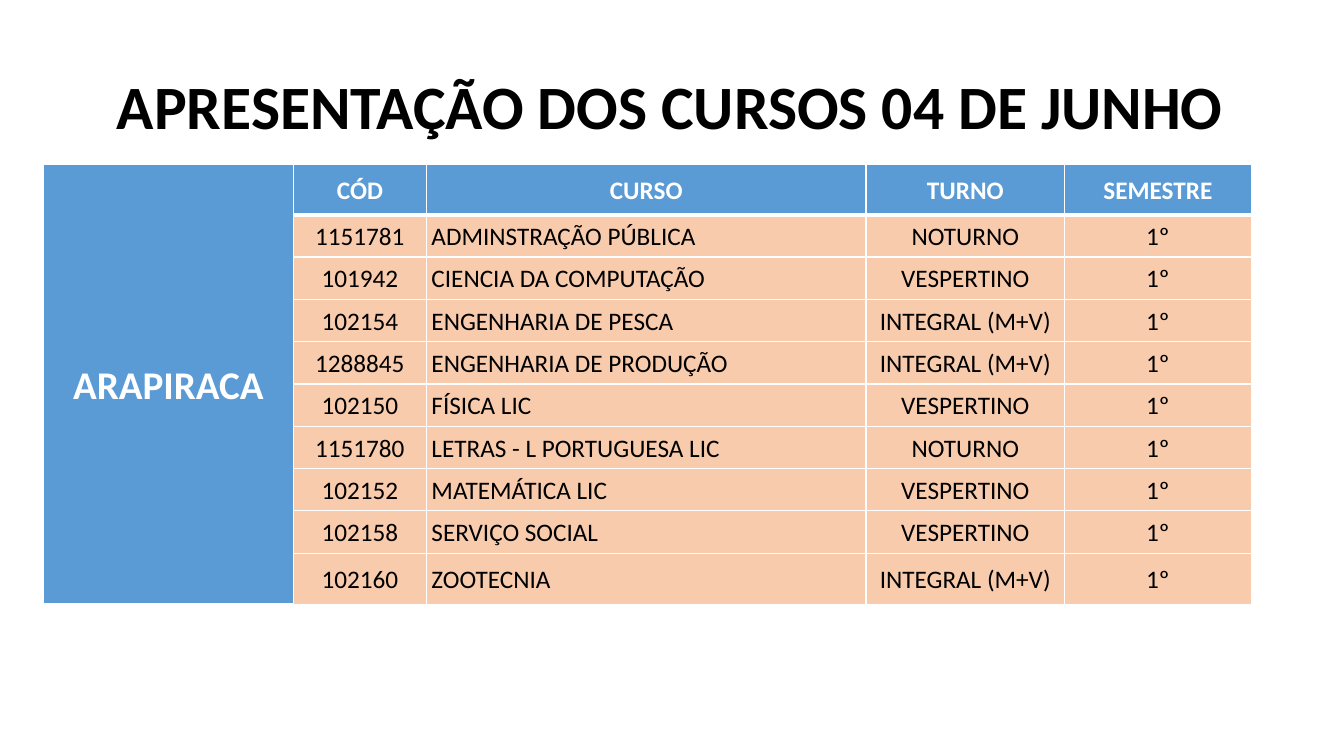
"""Builds the slide that lists the Arapiraca courses presented on 4 June."""
from typing import NamedTuple

from pptx import Presentation
from pptx import util as u
from pptx.dml.color import RGBColor
from pptx.enum import text
from pptx.oxml import parse_xml
from pptx.oxml.ns import nsdecls

HUES = {"head": "5B9BD5", "body": "F8CBAD", "white": "FFFFFF", "black": "000000"}
FONT = "Calibri"
WIDTHS = (2.48, 1.32, 4.36, 1.97, 1.85)
HEADS = ("ARAPIRACA", "CÓD", "CURSO", "TURNO", "SEMESTRE")
MID = text.PP_ALIGN.CENTER
LEFT = text.PP_ALIGN.LEFT


class Course(NamedTuple):
    code: str
    name: str
    shift: str
    term: str = "1º"


class Look(NamedTuple):
    fill: str
    ink: str
    size: int
    bold: bool
    align: text.PP_ALIGN
    base: int


COURSES = (
    Course("1151781", "ADMINSTRAÇÃO PÚBLICA", "NOTURNO"),
    Course("101942", "CIENCIA DA COMPUTAÇÃO", "VESPERTINO"),
    Course("102154", "ENGENHARIA DE PESCA", "INTEGRAL (M+V)"),
    Course("1288845", "ENGENHARIA DE PRODUÇÃO", "INTEGRAL (M+V)"),
    Course("102150", "FÍSICA LIC", "VESPERTINO"),
    Course("1151780", "LETRAS - L PORTUGUESA LIC", "NOTURNO"),
    Course("102152", "MATEMÁTICA LIC", "VESPERTINO"),
    Course("102158", "SERVIÇO SOCIAL", "VESPERTINO"),
    Course("102160", "ZOOTECNIA", "INTEGRAL (M+V)"),
)


def style(para, size: int, ink: str, bold: bool, align, gap: float) -> None:
    """Format a paragraph and its runs."""
    para.alignment = align
    para.line_spacing = gap
    for run in para.runs:
        font = run.font
        font.name, font.size, font.bold = FONT, u.Pt(size), bold
        font.color.rgb = RGBColor.from_string(HUES[ink])


def edge(cell, base: int) -> None:
    """Give a cell white borders, with the bottom one base points wide."""
    props = cell._tc.get_or_add_tcPr()
    sides = (("L", 1), ("R", 1), ("T", 1), ("B", base))
    for spot, (side, width) in enumerate(sides):
        props.insert(spot, parse_xml(
            f'<a:ln{side} {nsdecls("a")} w="{u.Pt(width)}"><a:solidFill>'
            f'<a:srgbClr val="{HUES["white"]}"/></a:solidFill></a:ln{side}>'))


def paint(cell, words: str, look: Look) -> None:
    """Fill a cell with words, colour and borders."""
    cell.text_frame.text = words
    cell.vertical_anchor = text.MSO_ANCHOR.MIDDLE
    cell.margin_left = cell.margin_right = u.Inches(0.05)
    cell.margin_top = cell.margin_bottom = 0
    cell.fill.solid()
    cell.fill.fore_color.rgb = RGBColor.from_string(HUES[look.fill])
    style(cell.text_frame.paragraphs[0], look.size, look.ink, look.bold, look.align, 1.07)
    edge(cell, look.base)


def choose(row: int, col: int) -> Look:
    """Pick the look of a cell from its place."""
    if row == 0 or col == 0:
        return Look("head", "white", 18 if col else 28, True, MID, 1 if row else 3)
    return Look("body", "black", 18, False, LEFT if col == 2 else MID, 1)


def add_grid(slide) -> None:
    """Add the course table with its merged campus column."""
    rows = [HEADS] + [("", *course) for course in COURSES]
    frame = slide.shapes.add_table(
        len(rows), len(WIDTHS), u.Inches(0.43), u.Inches(1.63),
        u.Inches(sum(WIDTHS)), u.Inches(4.31))
    grid = frame.table
    grid.horz_banding = False
    for col, width in zip(grid.columns, WIDTHS):
        col.width = u.Inches(width)
    for r, words in enumerate(rows):
        grid.rows[r].height = u.Inches(0.42 if r else 0.5)
        for c, word in enumerate(words):
            paint(grid.cell(r, c), word, choose(r, c))
    grid.cell(0, 0).merge(grid.cell(len(rows) - 1, 0))
    frame.height = u.Inches(4.31)


def add_title(slide) -> None:
    """Place and format the title."""
    title = slide.shapes.title
    title.left, title.top = u.Inches(0.9), u.Inches(0.36)
    title.width, title.height = u.Inches(11.5), u.Inches(1.45)
    frame = title.text_frame
    frame.text = "APRESENTAÇÃO DOS CURSOS 04 DE JUNHO"
    frame.vertical_anchor = text.MSO_ANCHOR.MIDDLE
    style(frame.paragraphs[0], 44, "black", True, MID, 0.9)


def main() -> None:
    """Build and save the deck."""
    deck = Presentation()
    deck.slide_width, deck.slide_height = u.Inches(13.33), u.Inches(7.5)
    slide = deck.slides.add_slide(deck.slide_layouts[5])
    add_grid(slide)
    add_title(slide)
    deck.save("out.pptx")


if __name__ == "__main__":
    main()
